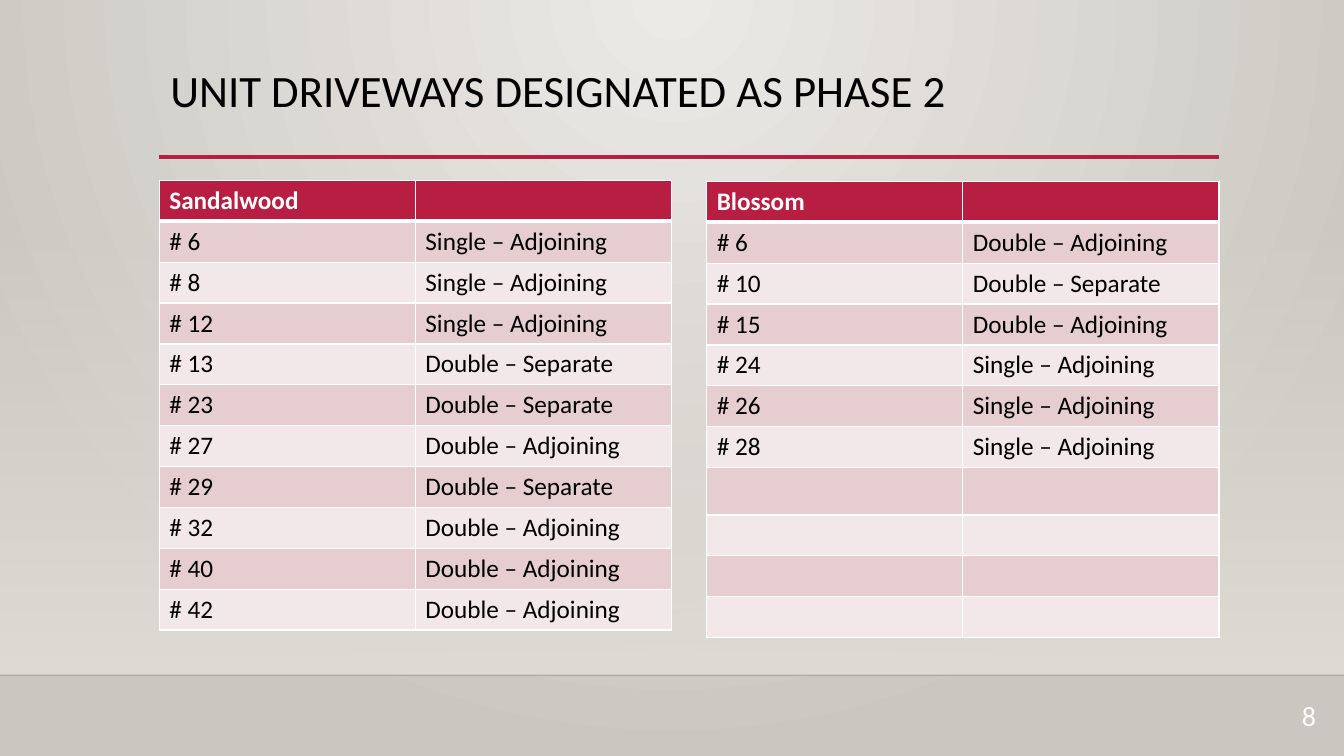
from lxml.etree import SubElement
from pptx import Presentation
from pptx.dml.color import RGBColor
from pptx.enum.shapes import MSO_CONNECTOR, MSO_SHAPE
from pptx.enum.text import MSO_ANCHOR, PP_ALIGN
from pptx.oxml.ns import qn
from pptx.util import Inches, Pt

TITLE = "UNIT DRIVEWAYS DESIGNATED AS PHASE 2"
PAGE_NUMBER = "8"
SINGLE_ADJOINING = "Single – Adjoining"
DOUBLE_ADJOINING = "Double – Adjoining"
DOUBLE_SEPARATE = "Double – Separate"
STREETS = [
    {"name": "Sandalwood", "left": 1.58, "top": 1.79, "taller_rows": {},
     "units": [(6, SINGLE_ADJOINING), (8, SINGLE_ADJOINING), (12, SINGLE_ADJOINING),
               (13, DOUBLE_SEPARATE), (23, DOUBLE_SEPARATE), (27, DOUBLE_ADJOINING),
               (29, DOUBLE_SEPARATE), (32, DOUBLE_ADJOINING), (40, DOUBLE_ADJOINING),
               (42, DOUBLE_ADJOINING)]},
    {"name": "Blossom", "left": 7.01, "top": 1.8, "taller_rows": {7: 0.47},
     "units": [(6, DOUBLE_ADJOINING), (10, DOUBLE_SEPARATE), (15, DOUBLE_ADJOINING),
               (24, SINGLE_ADJOINING), (26, SINGLE_ADJOINING), (28, SINGLE_ADJOINING)]},
]
COLORS = {"glow": "ECEAE7", "edge": "CAC7C1", "wall": "DFDBD5", "accent": "B71E42",
          "dark_band": "E6CDCF", "light_band": "F3E8E9",
          "white": "FFFFFF", "black": "000000", "shelf": "000001"}
FONT = "Calibri"
WIDTH, HEIGHT = 13.33, 7.5
SHELF_TOP = 6.7
ROW_COUNT = 11
ROW_HEIGHT = 4.46 / ROW_COUNT
COLUMN_WIDTH = 2.54


def color(name):
    return RGBColor.from_string(COLORS[name])


def set_alpha(fill_element, percent):
    SubElement(fill_element.find(".//" + qn("a:srgbClr")), qn("a:alpha"),
               val=str(percent * 1000))


def fill_gradient(fill, names):
    fill.gradient()
    for stop, name, position in zip(fill.gradient_stops, names, (0, 1)):
        stop.color.rgb = color(name)
        stop.position = position


def add_rule(page, left, right, y, name, points):
    rule = page.shapes.add_connector(MSO_CONNECTOR.STRAIGHT, Inches(left), Inches(y),
                                     Inches(right), Inches(y))
    rule.line.color.rgb = color(name)
    rule.line.width = Pt(points)
    SubElement(rule._element.spPr, qn("a:effectLst"))
    return rule


def write(frame, text, size, name, **formats):
    para = frame.paragraphs[0]
    span = para.add_run()
    span.text = text
    for key, value in {"name": FONT, "size": Pt(size), **formats}.items():
        setattr(span.font, key, value)
    span.font.color.rgb = color(name)
    return para


def add_borders(cell, row):
    """Draw white cell edges, with a thick one under the header row."""
    points = {"lnL": 1, "lnR": 1, "lnT": 3 if row == 1 else 1, "lnB": 3 if row == 0 else 1}
    properties = cell._tc.get_or_add_tcPr()
    for tag, width in points.items():
        line = SubElement(properties, qn("a:" + tag), w=str(Pt(width)))
        solid = SubElement(line, qn("a:solidFill"))
        SubElement(solid, qn("a:srgbClr"), val=COLORS["white"])


def add_street_table(page, street):
    heights = [street["taller_rows"].get(row, ROW_HEIGHT) for row in range(ROW_COUNT)]
    table = page.shapes.add_table(
        ROW_COUNT, 2, Inches(street["left"]), Inches(street["top"]),
        Inches(2 * COLUMN_WIDTH), Inches(sum(heights))).table
    for column in table.columns:
        column.width = Inches(COLUMN_WIDTH)
    texts = [(street["name"], "")] + [(f"# {unit}", kind) for unit, kind in street["units"]]
    texts += [("", "")] * (ROW_COUNT - len(texts))
    for row, pair in enumerate(texts):
        table.rows[row].height = Inches(heights[row])
        header = row == 0
        band = "accent" if header else "dark_band" if row % 2 else "light_band"
        for column, text in enumerate(pair):
            cell = table.cell(row, column)
            add_borders(cell, row)
            cell.fill.solid()
            cell.fill.fore_color.rgb = color(band)
            if text:
                write(cell.text_frame, text, 18, "white" if header else "black", bold=header)


def main():
    deck = Presentation()
    deck.slide_width, deck.slide_height = Inches(WIDTH), Inches(HEIGHT)
    page = deck.slides.add_slide(deck.slide_layouts[5])

    fill_gradient(page.background.fill, ("glow", "edge"))
    gradient = page._element.find(".//" + qn("a:gradFill"))
    gradient.remove(gradient.find(qn("a:lin")))
    circle = SubElement(gradient, qn("a:path"), path="circle")
    SubElement(circle, qn("a:fillToRect"), l="43000", t="0", r="43000", b="100000")

    wall = page.shapes.add_shape(MSO_SHAPE.RECTANGLE, 0, Inches(2.21), Inches(WIDTH),
                                 Inches(SHELF_TOP - 2.21))
    wall.shadow.inherit = False
    wall.line.fill.background()
    fill_gradient(wall.fill, ("wall", "wall"))
    wall.fill.gradient_angle = 270
    set_alpha(wall._element.spPr.find(qn("a:gradFill")), 0)

    shelf = add_rule(page, 0, WIDTH, SHELF_TOP, "shelf", 1)
    set_alpha(shelf._element.spPr.find(qn("a:ln")), 20)
    add_rule(page, 1.58, 12.09, 1.56, "accent", 2.5)

    title = page.shapes.title
    title.left, title.top, title.width, title.height = map(Inches, (1.59, 0.63, 10.5, 0.69))
    title.text_frame.vertical_anchor = MSO_ANCHOR.TOP
    para = write(title.text_frame, TITLE, 32, "black")
    para.alignment = PP_ALIGN.LEFT
    para.line_spacing = 0.9

    for street in STREETS:
        add_street_table(page, street)

    number = page.shapes.add_textbox(*map(Inches, (12.4, 6.88, 0.75, 0.5)))
    number.text_frame.word_wrap = True
    write(number.text_frame, PAGE_NUMBER, 20, "white").alignment = PP_ALIGN.RIGHT

    deck.save("out.pptx")


if __name__ == "__main__":
    main()
